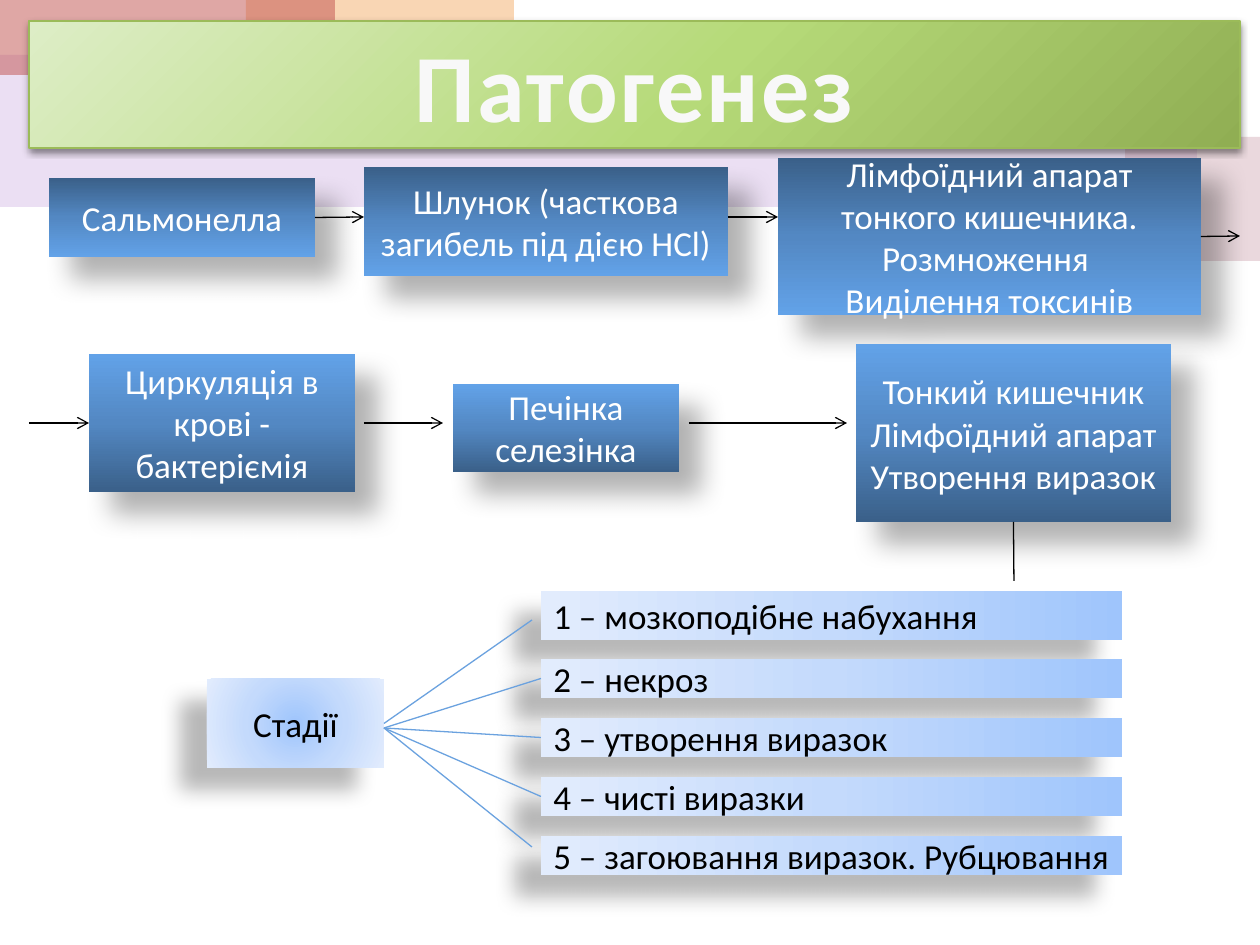
from dataclasses import dataclass

import pptx
import pptx.dml.color
import pptx.enum.shapes
import pptx.enum.text
import pptx.oxml
import pptx.oxml.ns
import pptx.util

EMU_PER_PX = 914400 / 126
FONT = "Calibri"
ALIGN = pptx.enum.text.PP_ALIGN
qn = pptx.oxml.ns.qn
NS = pptx.oxml.ns.nsdecls("a")


@dataclass(frozen=True)
class Gradient:
    stops: dict[int, str]
    angle: int | None = None
    focus: tuple[int, int, int, int] = (50, 50, 50, 50)


@dataclass(frozen=True)
class Shadow:
    alpha: int
    blur: float
    dist: float
    angle: int


@dataclass(frozen=True)
class Look:
    gradient: Gradient
    shadow: Shadow
    color: str
    line: str | None = None


@dataclass(frozen=True)
class Box:
    text: str
    x: int
    y: int
    w: int
    h: int


@dataclass(frozen=True)
class Link:
    x1: int
    y1: int
    x2: int
    y2: int
    begin: tuple | None = None  # (shape, side)
    end: tuple | None = None


BLUE = {0: "3A6089", 50: "5388C3", 100: "62A2E8"}
PALE = {0: "9FC5FC", 50: "C4DAFC", 100: "E2ECFD"}
GREEN = {0: "DDEDC6", 55: "B6DA79", 100: "90AE53"}
STEP_SHADOW = Shadow(30, 15, 18, 45)
STAGE_SHADOW = Shadow(28, 11.8, 19.7, 141)

TITLE = Look(Gradient(GREEN, focus=(-40, -90, 140, 190)), Shadow(45, 4, 2, 90), "F8F8F8", "9BBB59")
UPPER = Look(Gradient(BLUE, 90), STEP_SHADOW, "FFFFFF")
LOWER = Look(Gradient(BLUE, 270), STEP_SHADOW, "FFFFFF")
HUB = Look(Gradient(PALE), STAGE_SHADOW, "000000")
STAGE = Look(Gradient(PALE, 180), STAGE_SHADOW, "000000")


def px(n: float) -> pptx.util.Emu:
    return pptx.util.Emu(round(n * EMU_PER_PX))


def rgb(color: str) -> pptx.dml.color.RGBColor:
    return pptx.dml.color.RGBColor.from_string(color)


def add_rect(slide, x: int, y: int, w: int, h: int):
    s = slide.shapes.add_shape(
        pptx.enum.shapes.MSO_SHAPE.RECTANGLE, px(x), px(y), px(w), px(h))
    s.shadow.inherit = False
    s.line.fill.background()
    return s


def add_backdrop(slide, x: int, y: int, w: int, h: int, color: str, alpha: int) -> None:
    s = add_rect(slide, x, y, w, h)
    s.fill.solid()
    s.fill.fore_color.rgb = rgb(color)
    clr = s.fill._xPr.find(qn("a:solidFill"))[0]
    clr.append(pptx.oxml.parse_xml(f'<a:alpha {NS} val="{alpha * 1000}"/>'))


def set_gradient(s, g: Gradient) -> None:
    stops = "".join(f'<a:gs pos="{pos * 1000}"><a:srgbClr val="{c}"/></a:gs>'
                    for pos, c in g.stops.items())
    if g.angle is None:
        rect = " ".join(f'{side}="{v * 1000}"' for side, v in zip("ltrb", g.focus))
        course = f'<a:path path="circle"><a:fillToRect {rect}/></a:path>'
    else:
        course = f'<a:lin ang="{g.angle * 60000}" scaled="0"/>'
    s.fill.background()
    spPr = s._element.spPr
    spPr.replace(spPr.find(qn("a:noFill")), pptx.oxml.parse_xml(
        f'<a:gradFill {NS} rotWithShape="1"><a:gsLst>{stops}</a:gsLst>{course}</a:gradFill>'))


def set_shadow(s, sh: Shadow) -> None:
    s._element.spPr.find(qn("a:effectLst")).append(pptx.oxml.parse_xml(
        f'<a:outerShdw {NS} blurRad="{round(sh.blur * 12700)}" dist="{round(sh.dist * 12700)}" '
        f'dir="{sh.angle * 60000}" algn="ctr" rotWithShape="0"><a:srgbClr val="000000">'
        f'<a:alpha val="{sh.alpha * 1000}"/></a:srgbClr></a:outerShdw>'))


def write(s, text: str, *, color: str, size: int = 20, bold: bool = False,
          spacing: float = 0, align=ALIGN.CENTER) -> None:
    tf = s.text_frame
    tf.word_wrap = True
    tf.vertical_anchor = pptx.enum.text.MSO_ANCHOR.MIDDLE
    for i, line in enumerate(text.split("\n")):
        p = tf.add_paragraph() if i else tf.paragraphs[0]
        p.alignment = align
        r = p.add_run()
        r.text = line
        r.font.name, r.font.size, r.font.bold = FONT, pptx.util.Pt(size), bold
        r.font.color.rgb = rgb(color)
        if spacing:
            r._r.get_or_add_rPr().set("spc", str(round(spacing * 100)))


def add_box(slide, box: Box, look: Look, **fmt):
    s = add_rect(slide, box.x, box.y, box.w, box.h)
    set_gradient(s, look.gradient)
    set_shadow(s, look.shadow)
    if look.line:
        s.line.color.rgb = rgb(look.line)
        s.line.width = pptx.util.Pt(0.75)
    write(s, box.text, color=look.color, **fmt)
    return s


def add_link(slide, link: Link, color: str, arrow: bool = False) -> None:
    c = slide.shapes.add_connector(
        pptx.enum.shapes.MSO_CONNECTOR.STRAIGHT,
        px(link.x1), px(link.y1), px(link.x2), px(link.y2))
    if link.begin:
        c.begin_connect(*link.begin)
    if link.end:
        c.end_connect(*link.end)
    c.line.color.rgb = rgb(color)
    c.line.width = pptx.util.Pt(0.75)
    spPr = c._element.spPr
    if arrow:
        spPr.find(qn("a:ln")).append(pptx.oxml.parse_xml(f'<a:tailEnd {NS} type="arrow"/>'))
    spPr.append(pptx.oxml.parse_xml(f"<a:effectLst {NS}/>"))


def main() -> None:
    prs = pptx.Presentation()
    prs.slide_width, prs.slide_height = px(1260), px(945)
    slide = prs.slides.add_slide(prs.slide_layouts[6])

    # Backdrop blocks
    add_backdrop(slide, 0, 55, 1197, 152, "BF98D8", 30)
    add_backdrop(slide, 1125, 137, 135, 124, "CC9EAC", 40)
    add_backdrop(slide, 246, 0, 268, 75, "F5BC83", 60)
    add_backdrop(slide, 0, 0, 335, 75, "C0504D", 50)

    # Title
    add_box(slide, Box("Патогенез", 29, 21, 1211, 127), TITLE, size=55, bold=True, spacing=1.5)

    # Steps of the disease
    salmonella, _, lymphoid = [add_box(slide, b, UPPER) for b in (
        Box("Сальмонелла", 49, 178, 266, 79),
        Box("Шлунок (часткова загибель під дією HCl)", 364, 167, 364, 109),
        Box("Лімфоїдний апарат тонкого кишечника. Розмноження \nВиділення токсинів",
            778, 158, 423, 157))]
    blood, _, intestine = [add_box(slide, b, LOWER) for b in (
        Box("Циркуляція в крові - бактеріємія", 89, 354, 266, 138),
        Box("Печінка\nселезінка", 453, 384, 226, 88),
        Box("Тонкий кишечник\nЛімфоїдний апарат\nУтворення виразок", 856, 344, 315, 178))]

    # Stages
    hub = add_box(slide, Box("Стадії", 207, 679, 177, 89), HUB)
    names = ("мозкоподібне набухання", "некроз", "утворення виразок",
             "чисті виразки", "загоювання виразок. Рубцювання")
    stages = []
    for i, name in enumerate(names):
        y, h = (600 + 59 * i, 39) if i else (591, 49)
        stages.append(add_box(slide, Box(f"{i + 1} – {name}", 541, y, 581, h),
                              STAGE, align=ALIGN.LEFT))

    # Arrows between steps
    for link in (Link(315, 217, 364, 217, begin=(salmonella, 3)),
                 Link(728, 217, 778, 217),
                 Link(1201, 236, 1240, 236, begin=(lymphoid, 3)),
                 Link(29, 423, 89, 423, end=(blood, 1)),
                 Link(364, 423, 443, 423),
                 Link(689, 423, 847, 423)):
        add_link(slide, link, "000000", arrow=True)
    add_link(slide, Link(1014, 522, 1014, 581, begin=(intestine, 2)), "000000")

    # Fan from the hub to the stages
    add_link(slide, Link(384, 723, 532, 620, begin=(hub, 3)), "6BA2DF")
    add_link(slide, Link(384, 728, 532, 847), "6BA2DF")
    for stage in stages[1:4]:
        add_link(slide, Link(384, 728, 541, 728, end=(stage, 1)), "6BA2DF")

    prs.save("out.pptx")


if __name__ == "__main__":
    main()
